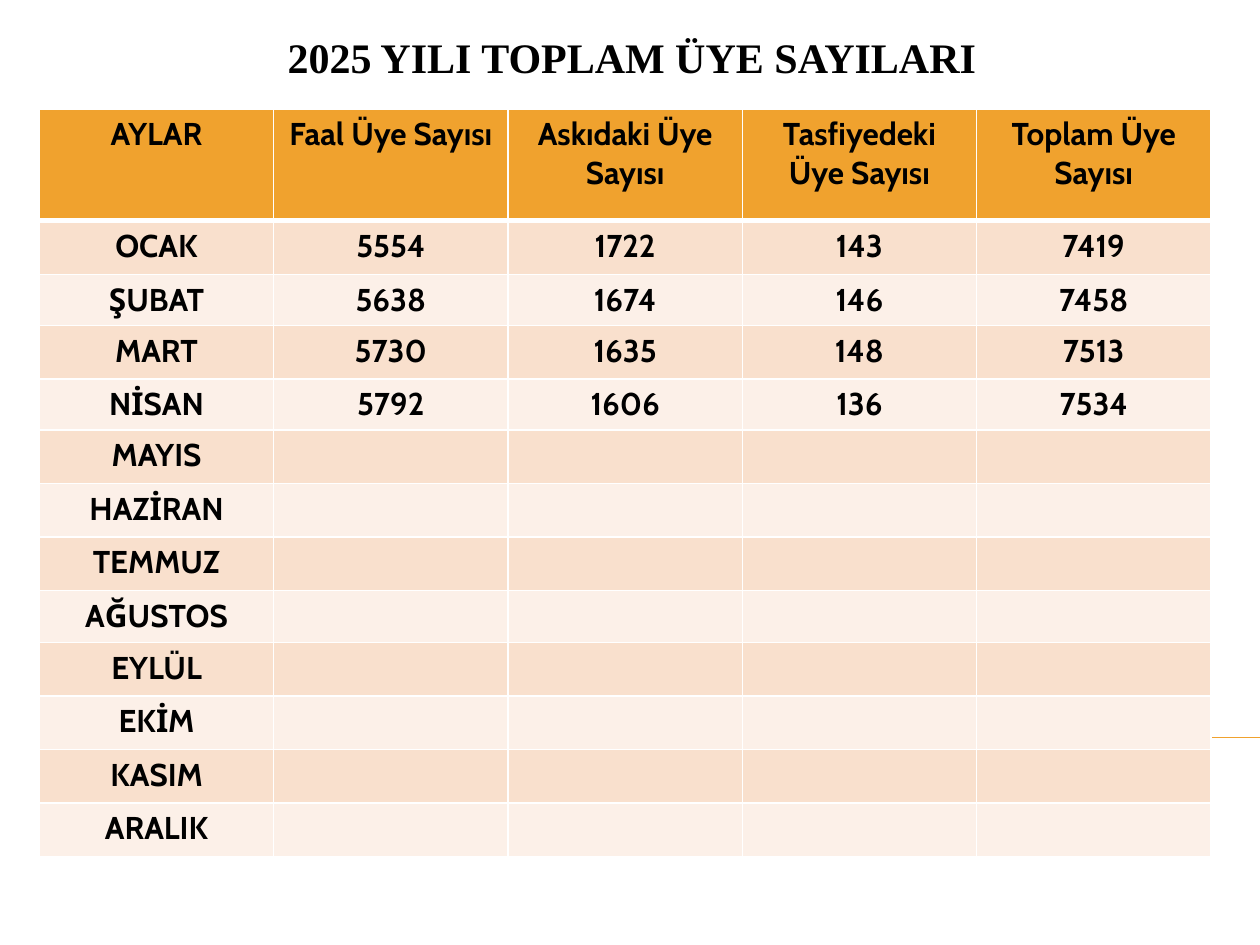
from lxml import etree
from pptx import Presentation
from pptx.dml.color import RGBColor
from pptx.enum.shapes import MSO_CONNECTOR
from pptx.enum.text import MSO_ANCHOR, PP_ALIGN
from pptx.oxml.ns import qn
from pptx.util import Pt

STRAIGHT = MSO_CONNECTOR.STRAIGHT
BOTTOM = MSO_ANCHOR.BOTTOM
CENTER = PP_ALIGN.CENTER

ORANGE = RGBColor(0xF0, 0xA2, 0x2E)
PEACH = RGBColor(0xF9, 0xE0, 0xCD)
CREAM = RGBColor(0xFC, 0xF0, 0xE8)
WHITE = RGBColor(0xFF, 0xFF, 0xFF)
BLACK = RGBColor(0, 0, 0)

TITLE = "2025 YILI TOPLAM ÜYE SAYILARI"
HEADERS = ["AYLAR", "Faal Üye Sayısı", "Askıdaki Üye Sayısı",
           "Tasfiyedeki Üye Sayısı", "Toplam Üye Sayısı"]
MONTHS = ["OCAK", "ŞUBAT", "MART", "NİSAN", "MAYIS", "HAZİRAN", "TEMMUZ",
          "AĞUSTOS", "EYLÜL", "EKİM", "KASIM", "ARALIK"]
MEMBERS = {
    "OCAK": [5554, 1722, 143, 7419],
    "ŞUBAT": [5638, 1674, 146, 7458],
    "MART": [5730, 1635, 148, 7513],
    "NİSAN": [5792, 1606, 136, 7534],
}
HEADER_HEIGHT = 64
MONTH_HEIGHT = 30.6
SHORT_HEIGHTS = {"ŞUBAT": 29.2, "NİSAN": 29.2, "AĞUSTOS": 29.6}


def add_centred_text(para, text, font, size):
    para.alignment = CENTER
    span = para.add_run()
    span.text = text
    span.font.name = font
    span.font.size = Pt(size)
    span.font.bold = True
    span.font.color.rgb = BLACK


def set_borders(cell, bottom_width):
    """White lines on all four sides; they must precede the cell's fill."""
    properties = cell._tc.get_or_add_tcPr()
    for side, width in (("L", 1), ("R", 1), ("T", 1), ("B", bottom_width)):
        line = etree.SubElement(properties, qn(f"a:ln{side}"), w=str(Pt(width)))
        fill = etree.SubElement(line, qn("a:solidFill"))
        etree.SubElement(fill, qn("a:srgbClr"), val=str(WHITE))


def add_rule(page, left, right, top):
    rule = page.shapes.add_connector(STRAIGHT, Pt(left), Pt(top), Pt(right), Pt(top))
    rule.line.color.rgb = ORANGE
    rule.line.width = Pt(0.75)
    etree.SubElement(rule._element.spPr, qn("a:effectLst"))


def add_title(page, left, top, width, height):
    box = page.shapes.add_textbox(Pt(left), Pt(top), Pt(width), Pt(height))
    frame = box.text_frame
    frame.word_wrap = True
    frame.vertical_anchor = BOTTOM
    add_centred_text(frame.paragraphs[0], TITLE, "Times New Roman", 24)


def add_member_table(page, left, top, width):
    rows = [HEADERS] + [[month, *MEMBERS.get(month, [""] * 4)] for month in MONTHS]
    heights = [HEADER_HEIGHT] + [SHORT_HEIGHTS.get(m, MONTH_HEIGHT) for m in MONTHS]
    table = page.shapes.add_table(len(rows), len(HEADERS), Pt(left), Pt(top),
                                  Pt(width), Pt(sum(heights))).table
    for column in table.columns:
        column.width = Pt(width / len(HEADERS))
    for index, (values, height) in enumerate(zip(rows, heights)):
        table.rows[index].height = Pt(height)
        is_header = index == 0
        colour = ORANGE if is_header else PEACH if index % 2 else CREAM
        for cell, value in zip(table.rows[index].cells, values):
            set_borders(cell, 3 if is_header else 1)
            cell.fill.solid()
            cell.fill.fore_color.rgb = colour
            if value != "":
                add_centred_text(cell.text_frame.paragraphs[0], str(value), "Cabin", 18)


def main():
    deck = Presentation()
    deck.slide_width, deck.slide_height = Pt(720), Pt(540)
    page = deck.slides.add_slide(deck.slide_layouts[6])
    add_rule(page, 40.3, 720, 421.4)
    add_title(page, 28, 16.6, 666, 33.8)
    add_member_table(page, 22.5, 62.2, 669.5)
    deck.save("out.pptx")


if __name__ == "__main__":
    main()
